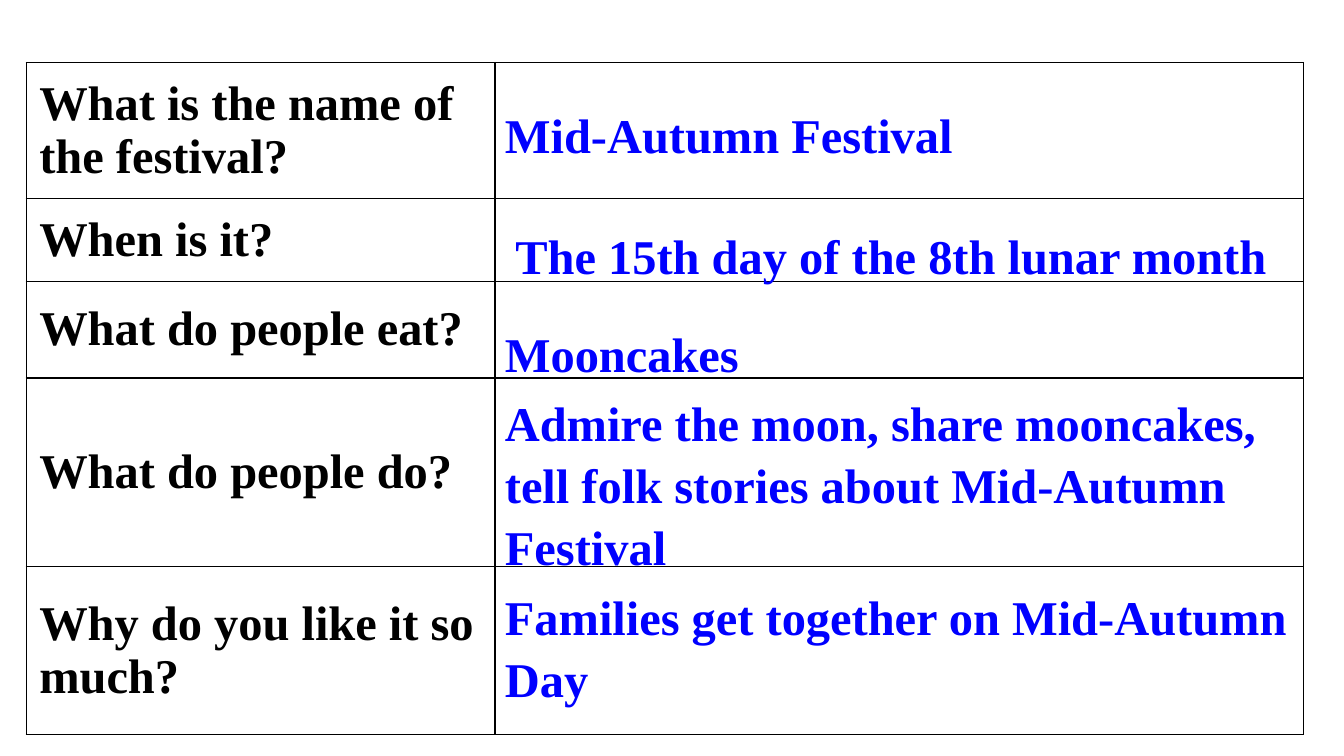
"""Build a slide of festival questions in a table with answers beside them."""
from lxml.etree import SubElement
from pptx import Presentation
from pptx.dml.color import RGBColor
from pptx.enum.text import MSO_ANCHOR, PP_ALIGN
from pptx.oxml.ns import qn
from pptx.util import Inches, Pt

WIDTH, HEIGHT = Inches(13.33), Inches(7.5)
BLACK = RGBColor(0, 0, 0)
BLUE = RGBColor(0, 0, 255)
WHITE = RGBColor(255, 255, 255)

TABLE_LEFT, TABLE_TOP = 1.95, 8.27
COLUMNS = (34.88, 60.17)
ANSWER_LEFT = TABLE_LEFT + COLUMNS[0]
SINGLE, LOOSE = 1.07, 1.29

QUESTIONS = (
    ("What is the name of the festival?", 18),
    ("When is it?", 10.93),
    ("What do people eat?", 12.8),
    ("What do people do?", 24.93),
    ("Why do you like it so much?", 22.27),
)
ANSWERS = (
    ("Mid-Autumn Festival", 11.07, 34.96, 10.67, False, {"spacing": LOOSE}),
    ("The 15th day of the 8th lunar month", 28.67, 58.89, 9.07, True,
     {"spacing": SINGLE, "alignment": PP_ALIGN.CENTER}),
    ("Mooncakes", 40, 18.98, 10.67, False, {"spacing": LOOSE}),
    ("Admire the moon, share mooncakes, tell folk stories about Mid-Autumn Festival",
     50.8, 61.29, 24.67, True, {"spacing": SINGLE}),
    ("Families get together on Mid-Autumn Day", 76.4, 61.97, 16.93, True,
     {"spacing": SINGLE}),
)


def across(percent):
    """Return a percentage of the slide width."""
    return round(WIDTH * percent / 100)


def down(percent):
    """Return a percentage of the slide height."""
    return round(HEIGHT * percent / 100)


def write(frame, text, color=BLACK, spacing=1.0, alignment=PP_ALIGN.LEFT):
    """Put one bold paragraph into a text frame."""
    paragraph = frame.paragraphs[0]
    paragraph.alignment = alignment
    paragraph.line_spacing = spacing
    run = paragraph.add_run()
    run.text = text
    run.font.name = "Times New Roman"
    run.font.size = Pt(34.6)
    run.font.bold = True
    run.font.color.rgb = color


def style_cell(cell):
    """Give a cell its margins, black borders and white fill."""
    cell.margin_left = cell.margin_right = Inches(0.13)
    cell.margin_top = cell.margin_bottom = Inches(0.07)
    cell.vertical_anchor = MSO_ANCHOR.MIDDLE
    properties = cell._tc.get_or_add_tcPr()
    for side in ("a:lnL", "a:lnR", "a:lnT", "a:lnB"):
        line = SubElement(properties, qn(side), w=str(Pt(1)))
        fill = SubElement(line, qn("a:solidFill"))
        SubElement(fill, qn("a:srgbClr"), val=str(BLACK))
    cell.fill.solid()
    cell.fill.fore_color.rgb = WHITE


def add_questions(slide):
    """Add the table with the questions in its first column."""
    heights = [height for _, height in QUESTIONS]
    table = slide.shapes.add_table(
        len(QUESTIONS), len(COLUMNS), across(TABLE_LEFT), down(TABLE_TOP),
        across(sum(COLUMNS)), down(sum(heights))).table
    table.first_row = table.horz_banding = False
    for column, width in zip(table.columns, COLUMNS):
        column.width = across(width)
    for row, (question, height) in zip(table.rows, QUESTIONS):
        row.height = down(height)
        for cell in row.cells:
            style_cell(cell)
        write(row.cells[0].text_frame, question)


def add_answer(slide, text, top, width, height, wrap, layout):
    """Add one blue answer over the second column."""
    box = slide.shapes.add_textbox(
        across(ANSWER_LEFT), down(top), across(width), down(height))
    box.text_frame.word_wrap = wrap
    write(box.text_frame, text, color=BLUE, **layout)


def main():
    """Build the slide and save it."""
    presentation = Presentation()
    presentation.slide_width, presentation.slide_height = WIDTH, HEIGHT
    slide = presentation.slides.add_slide(presentation.slide_layouts[6])
    add_questions(slide)
    for answer in ANSWERS:
        add_answer(slide, *answer)
    presentation.save("out.pptx")


if __name__ == "__main__":
    main()
